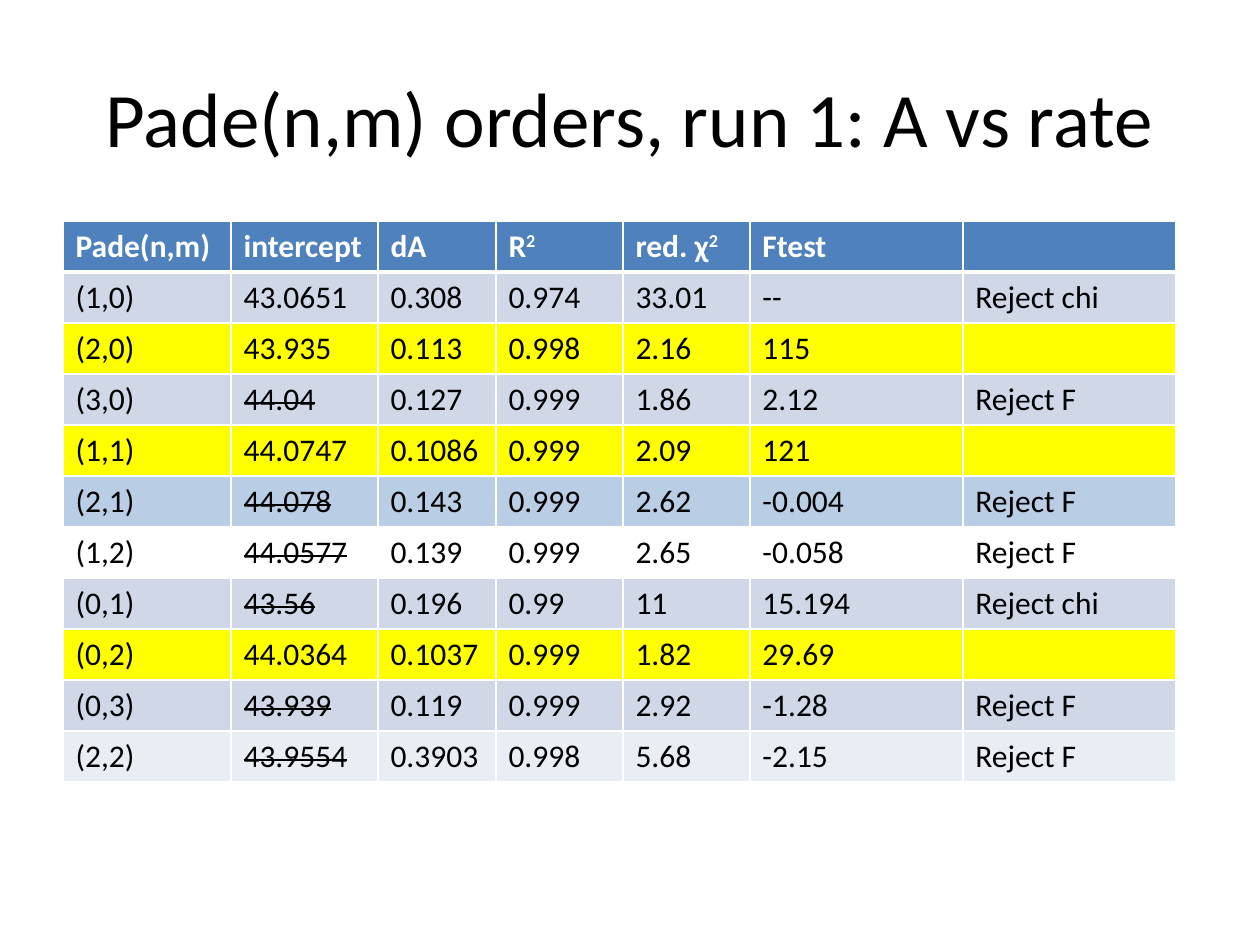
import pptx
import pptx.dml.color
import pptx.enum.text
import pptx.oxml.ns
import pptx.util
from lxml import etree

PX = 914400 // 126
FONT = "Calibri"
COLORS = {
    "black": "000000",
    "white": "FFFFFF",
    "header": "4F81BD",
    "band": "D0D8E8",
    "accepted": "FFFF00",
    "blue": "B9CDE5",
    "pale": "E9EDF4",
}
COLUMN_WIDTHS = [168, 147, 118, 127, 127, 213, 213]
ROW_HEIGHT = 51
HEADER = ["Pade(n,m)", "intercept", "dA", "R^2", "red. χ^2", "Ftest", ""]
FITS = [
    ("band", False, ["(1,0)", "43.0651", "0.308", "0.974", "33.01", "--", "Reject chi"]),
    ("accepted", False, ["(2,0)", "43.935", "0.113", "0.998", "2.16", "115", ""]),
    ("band", True, ["(3,0)", "44.04", "0.127", "0.999", "1.86", "2.12", "Reject F"]),
    ("accepted", False, ["(1,1)", "44.0747", "0.1086", "0.999", "2.09", "121", ""]),
    ("blue", True, ["(2,1)", "44.078", "0.143", "0.999", "2.62", "-0.004", "Reject F"]),
    (None, True, ["(1,2)", "44.0577", "0.139", "0.999", "2.65", "-0.058", "Reject F"]),
    ("band", True, ["(0,1)", "43.56", "0.196", "0.99", "11", "15.194", "Reject chi"]),
    ("accepted", False, ["(0,2)", "44.0364", "0.1037", "0.999", "1.82", "29.69", ""]),
    ("band", True, ["(0,3)", "43.939", "0.119", "0.999", "2.92", "-1.28", "Reject F"]),
    ("pale", True, ["(2,2)", "43.9554", "0.3903", "0.998", "5.68", "-2.15", "Reject F"]),
]


def px(length):
    return pptx.util.Emu(length * PX)


def rgb(name):
    return pptx.dml.color.RGBColor.from_string(COLORS[name])


def format_span(span, size, color, bold=False):
    span.font.name = FONT
    span.font.size = pptx.util.Pt(size)
    span.font.bold = bold
    span.font.color.rgb = rgb(color)


def add_title(page, text):
    box = page.shapes.add_textbox(px(63), px(38), px(1134), px(157))
    frame = box.text_frame
    frame.word_wrap = True
    frame.vertical_anchor = pptx.enum.text.MSO_ANCHOR.MIDDLE
    frame.text = text
    para = frame.paragraphs[0]
    para.alignment = pptx.enum.text.PP_ALIGN.CENTER
    format_span(para.runs[0], 44, "black")


def set_borders(cell, top, bottom):
    properties = cell._tc.get_or_add_tcPr()
    for side, width in (("L", 1), ("R", 1), ("T", top), ("B", bottom)):
        line = etree.SubElement(properties, pptx.oxml.ns.qn(f"a:ln{side}"),
                                w=str(pptx.util.Pt(width)))
        fill = etree.SubElement(line, pptx.oxml.ns.qn("a:solidFill"))
        etree.SubElement(fill, pptx.oxml.ns.qn("a:srgbClr"), val=COLORS["white"])


def fill_cell(cell, color):
    if color:
        cell.fill.solid()
        cell.fill.fore_color.rgb = rgb(color)
    else:
        cell.fill.background()


def write_cell(cell, text, color, bold=False, struck=False):
    para = cell.text_frame.paragraphs[0]
    base, _, exponent = text.partition("^")
    for part, attribute, value in (
        (base, "strike", "sngStrike" if struck else "noStrike"),
        (exponent, "baseline", "30000"),
    ):
        if part:
            span = para.add_run()
            span.text = part
            format_span(span, 18, color, bold)
            span._r.get_or_add_rPr().set(attribute, value)


def add_fit_table(page):
    rows = [("header", False, HEADER)] + FITS
    frame = page.shapes.add_table(len(rows), len(HEADER), px(63), px(221),
                                  px(sum(COLUMN_WIDTHS)), px(ROW_HEIGHT * len(rows)))
    table = frame.table
    for column, width in zip(table.columns, COLUMN_WIDTHS):
        column.width = px(width)
    for row_index, (fill, struck, values) in enumerate(rows):
        table.rows[row_index].height = px(ROW_HEIGHT)
        is_header = row_index == 0
        for column_index, text in enumerate(values):
            cell = table.cell(row_index, column_index)
            set_borders(cell, 3 if row_index == 1 else 1, 3 if is_header else 1)
            fill_cell(cell, fill)
            write_cell(cell, text, "white" if is_header else "black", is_header,
                       struck and column_index == 1)


def main():
    deck = pptx.Presentation()
    deck.slide_width = px(1260)
    deck.slide_height = px(945)
    page = deck.slides.add_slide(deck.slide_layouts[6])
    add_title(page, "Pade(n,m) orders, run 1: A vs rate")
    add_fit_table(page)
    deck.save("out.pptx")


if __name__ == "__main__":
    main()
